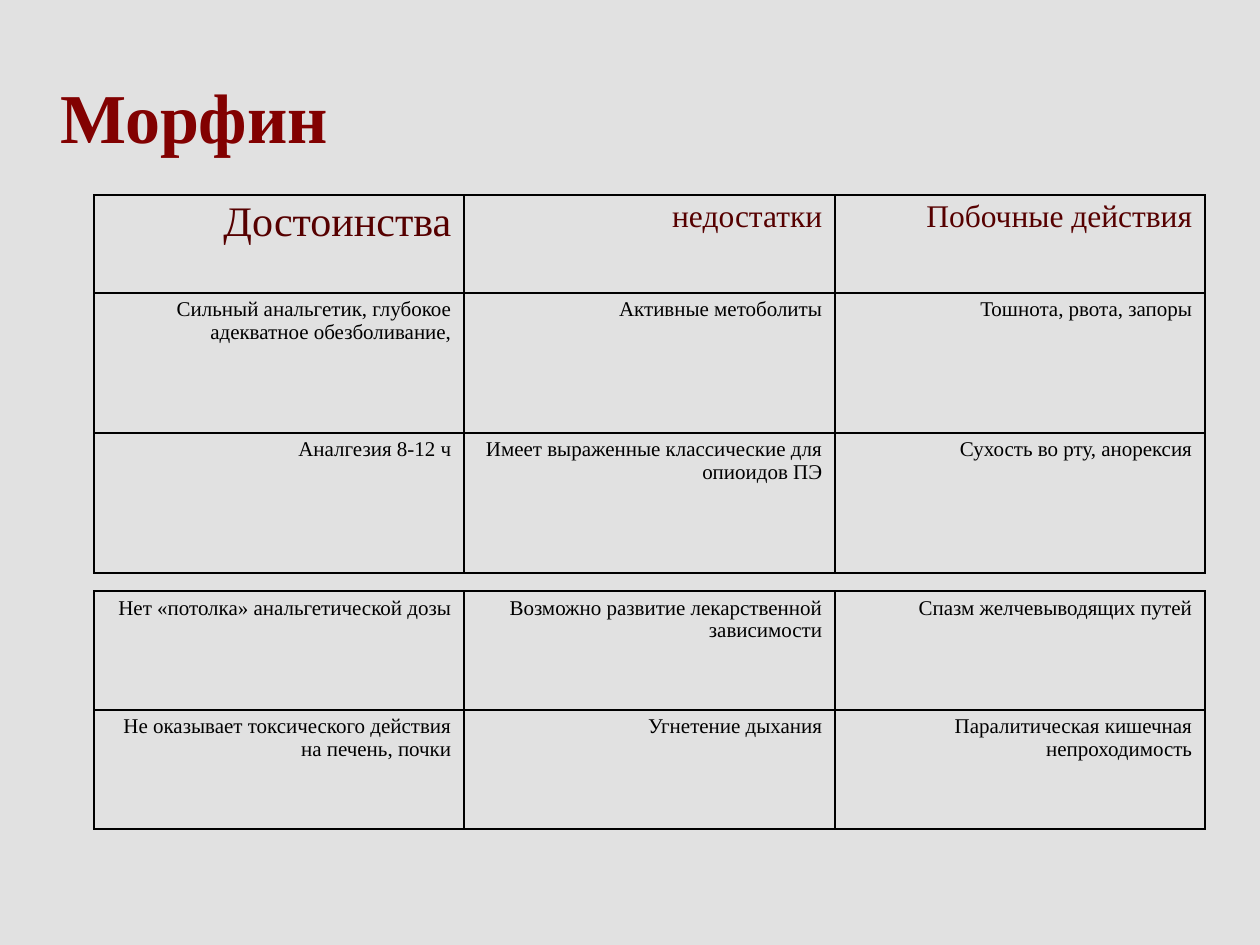
from dataclasses import dataclass

from lxml import etree
from pptx import Presentation
from pptx.dml.color import RGBColor
from pptx.enum.text import MSO_ANCHOR, MSO_AUTO_SIZE, PP_ALIGN
from pptx.oxml.ns import qn
from pptx.util import Emu, Pt

LEFT, RIGHT = PP_ALIGN.LEFT, PP_ALIGN.RIGHT
MIDDLE = MSO_ANCHOR.MIDDLE
NO_AUTOFIT = MSO_AUTO_SIZE.NONE

EMU_PER_PX = 914400 / 126
TITLE_ONLY = 5
TABLE_LEFT = 94
COLUMN_WIDTHS = (370, 371, 370)


@dataclass(frozen=True)
class Theme:
    font: str = "Times New Roman"
    background: str = "E1E1E1"
    title: str = "820101"
    header: str = "560000"
    body: str = "000000"
    border: str = "000000"
    title_size: int = 40
    lead_header_size: int = 24
    header_size: int = 18
    body_size: int = 12
    line_spacing: float = 0.95
    border_width: int = 1


@dataclass(frozen=True)
class Grid:
    top: int
    row_heights: tuple[int, ...]
    rows: tuple[tuple[str, ...], ...]
    has_header: bool = False


THEME = Theme()

GRIDS = (
    Grid(195, (98, 140, 140), (
        ("Достоинства", "недостатки", "Побочные действия"),
        ("Сильный анальгетик, глубокое адекватное обезболивание,",
         "Активные метоболиты", "Тошнота, рвота, запоры"),
        ("Аналгезия 8-12 ч", "Имеет выраженные классические для опиоидов ПЭ",
         "Сухость во рту, анорексия"),
    ), has_header=True),
    Grid(591, (119, 119), (
        ("Нет «потолка» анальгетической дозы",
         "Возможно развитие лекарственной зависимости",
         "Спазм желчевыводящих путей"),
        ("Не оказывает токсического действия на печень, почки",
         "Угнетение дыхания", "Паралитическая кишечная непроходимость"),
    )),
)


def px(length: int) -> Emu:
    return Emu(round(length * EMU_PER_PX))


def style_text(frame, size: int, color: str, align, bold: bool = False) -> None:
    paragraph = frame.paragraphs[0]
    paragraph.alignment = align
    paragraph.line_spacing = THEME.line_spacing
    for run in paragraph.runs:
        run.font.name = THEME.font
        run.font.size = Pt(size)
        run.font.bold = bold
        run.font.color.rgb = RGBColor.from_string(color)


def add_borders(cell) -> None:
    properties = cell._tc.get_or_add_tcPr()
    for position, side in enumerate(("a:lnL", "a:lnR", "a:lnT", "a:lnB")):
        line = etree.Element(qn(side), w=str(Pt(THEME.border_width)))
        fill = etree.SubElement(line, qn("a:solidFill"))
        etree.SubElement(fill, qn("a:srgbClr"), val=THEME.border)
        properties.insert(position, line)


def draw_title(slide, text: str) -> None:
    title = slide.shapes.title
    title.left, title.top, title.width, title.height = map(px, (54, -14, 833, 268))
    frame = title.text_frame
    frame.text = text
    frame.word_wrap = True
    frame.auto_size = NO_AUTOFIT
    frame.vertical_anchor = MIDDLE
    frame.margin_left = frame.margin_right = px(6)
    frame.margin_top = frame.margin_bottom = px(6)
    style_text(frame, THEME.title_size, THEME.title, LEFT, bold=True)


def draw_grid(slide, grid: Grid) -> None:
    table = slide.shapes.add_table(
        len(grid.rows), len(COLUMN_WIDTHS), px(TABLE_LEFT), px(grid.top),
        px(sum(COLUMN_WIDTHS)), px(sum(grid.row_heights))).table
    table.first_row = grid.has_header
    table.horz_banding = False
    for column, width in zip(table.columns, COLUMN_WIDTHS):
        column.width = px(width)
    for row, height in zip(table.rows, grid.row_heights):
        row.height = px(height)

    for r, texts in enumerate(grid.rows):
        for c, text in enumerate(texts):
            size, color = THEME.body_size, THEME.body
            if grid.has_header and r == 0:
                size = THEME.header_size if c else THEME.lead_header_size
                color = THEME.header
            cell = table.cell(r, c)
            cell.text_frame.text = text
            style_text(cell.text_frame, size, color, RIGHT)
            cell.fill.background()
            add_borders(cell)


def main() -> None:
    presentation = Presentation()
    presentation.slide_width, presentation.slide_height = px(1260), px(945)
    slide = presentation.slides.add_slide(presentation.slide_layouts[TITLE_ONLY])

    # Background and title
    background = slide.background.fill
    background.solid()
    background.fore_color.rgb = RGBColor.from_string(THEME.background)
    draw_title(slide, "Морфин")

    # Benefits, drawbacks and side effects
    for grid in GRIDS:
        draw_grid(slide, grid)

    presentation.save("out.pptx")


if __name__ == "__main__":
    main()
